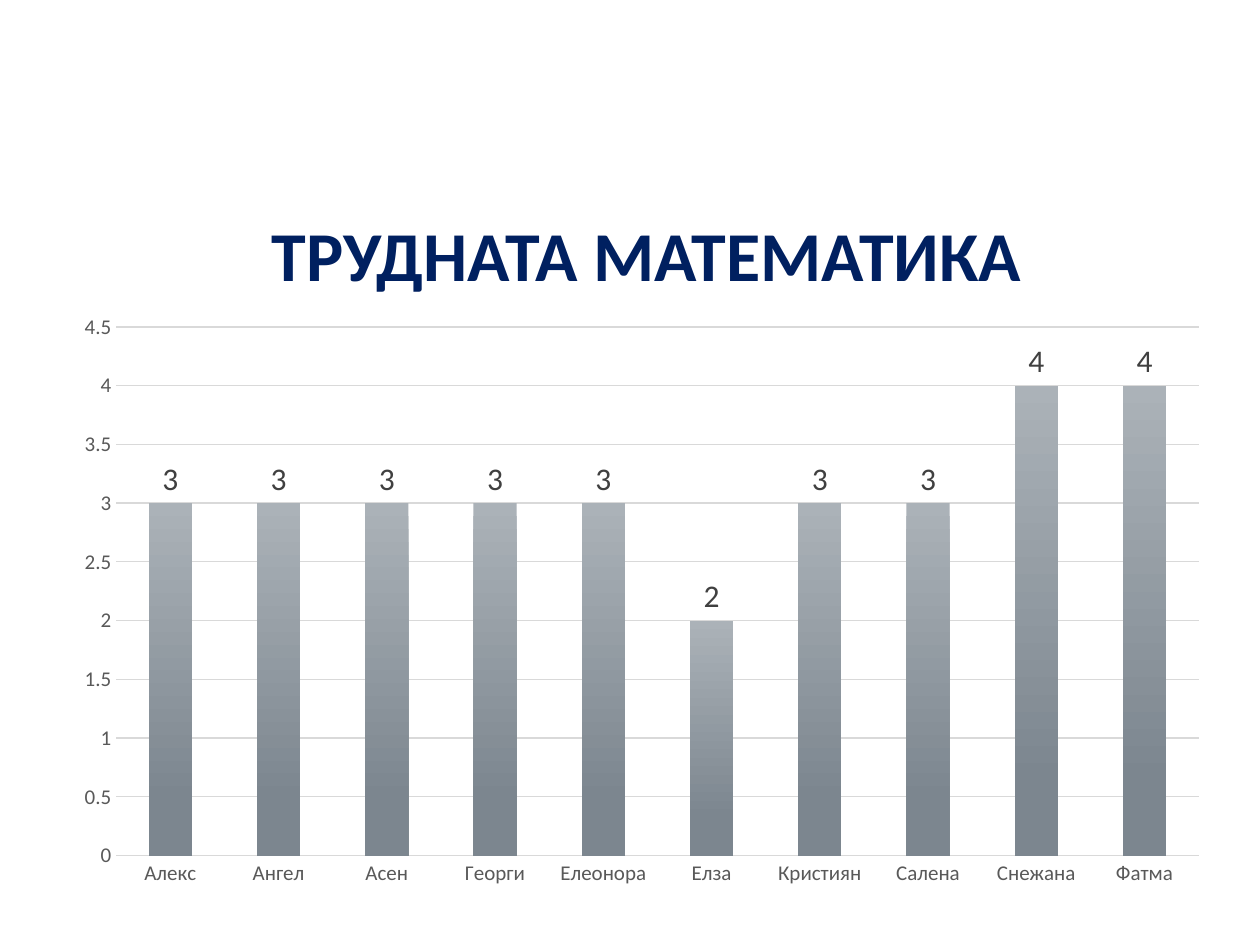
import pptx
import pptx.chart.data
import pptx.dml.color
import pptx.enum.chart
import pptx.enum.text
import pptx.util
from pptx.util import Cm, Pt

FONT = "Calibri"
GRADES = {
    "Алекс": 3, "Ангел": 3, "Асен": 3, "Георги": 3, "Елеонора": 3,
    "Елза": 2, "Кристиян": 3, "Салена": 3, "Снежана": 4, "Фатма": 4,
}


def rgb(value):
    return pptx.dml.color.RGBColor.from_string(value)


def set_attrs(obj, **values):
    for name, value in values.items():
        setattr(obj, name, value)


def set_font(font, size, color, bold=False):
    set_attrs(font, name=FONT, size=Pt(size), bold=bold)
    font.color.rgb = rgb(color)


def add_title(s, text):
    sp = s.shapes.title
    set_attrs(sp, left=Cm(1.02), top=Cm(3.02), width=Cm(24.03), height=Cm(3.07))
    tf = sp.text_frame
    set_attrs(tf, text=text, word_wrap=True,
              vertical_anchor=pptx.enum.text.MSO_ANCHOR.BOTTOM)
    p = tf.paragraphs[0]
    p.alignment = pptx.enum.text.PP_ALIGN.CENTER
    set_font(p.runs[0].font, 40, "002060", bold=True)


def format_axis(axis):
    none = pptx.enum.chart.XL_TICK_MARK.NONE
    set_attrs(axis, major_tick_mark=none, minor_tick_mark=none)
    axis.format.line.fill.background()
    set_font(axis.tick_labels.font, 12, "595959")


def format_value_axis(axis):
    format_axis(axis)
    set_attrs(axis, minimum_scale=0, maximum_scale=4.5, major_unit=0.5,
              has_major_gridlines=True)
    line = axis.major_gridlines.format.line
    line.width = Pt(0.75)
    line.color.rgb = rgb("D9D9D9")


def fill_gradient(fill, stops):
    """Fill from top to bottom with (position, colour) stops."""
    fill.gradient()
    fill.gradient_angle = 270
    for stop, (position, color) in zip(fill.gradient_stops, stops):
        stop.position = position
        stop.color.rgb = rgb(color)


def add_labels(plot):
    plot.has_data_labels = True
    labels = plot.data_labels
    set_attrs(labels, show_value=True,
              position=pptx.enum.chart.XL_LABEL_POSITION.OUTSIDE_END)
    set_font(labels.font, 18, "404040")


def add_grade_chart(s, grades):
    data = pptx.chart.data.CategoryChartData()
    data.categories = list(grades)
    data.add_series("Series 1", list(grades.values()))
    chart = s.shapes.add_chart(
        pptx.enum.chart.XL_CHART_TYPE.COLUMN_CLUSTERED,
        Cm(1.24), Cm(6.1), Cm(23.39), Cm(11.99), data).chart
    set_attrs(chart, has_title=False, has_legend=False)
    set_font(chart.font, 10, "000000")
    format_axis(chart.category_axis)
    format_value_axis(chart.value_axis)
    plot = chart.plots[0]
    set_attrs(plot, gap_width=150, vary_by_categories=False)
    fill_gradient(plot.series[0].format.fill, [(0, "ABB2B8"), (0.84, "7C868F")])
    add_labels(plot)


def main():
    prs = pptx.Presentation()
    set_attrs(prs, slide_width=Cm(25.4), slide_height=Cm(19.05))
    s = prs.slides.add_slide(prs.slide_layouts[5])
    add_title(s, "ТРУДНАТА МАТЕМАТИКА")
    add_grade_chart(s, GRADES)
    prs.save("out.pptx")


if __name__ == "__main__":
    main()
